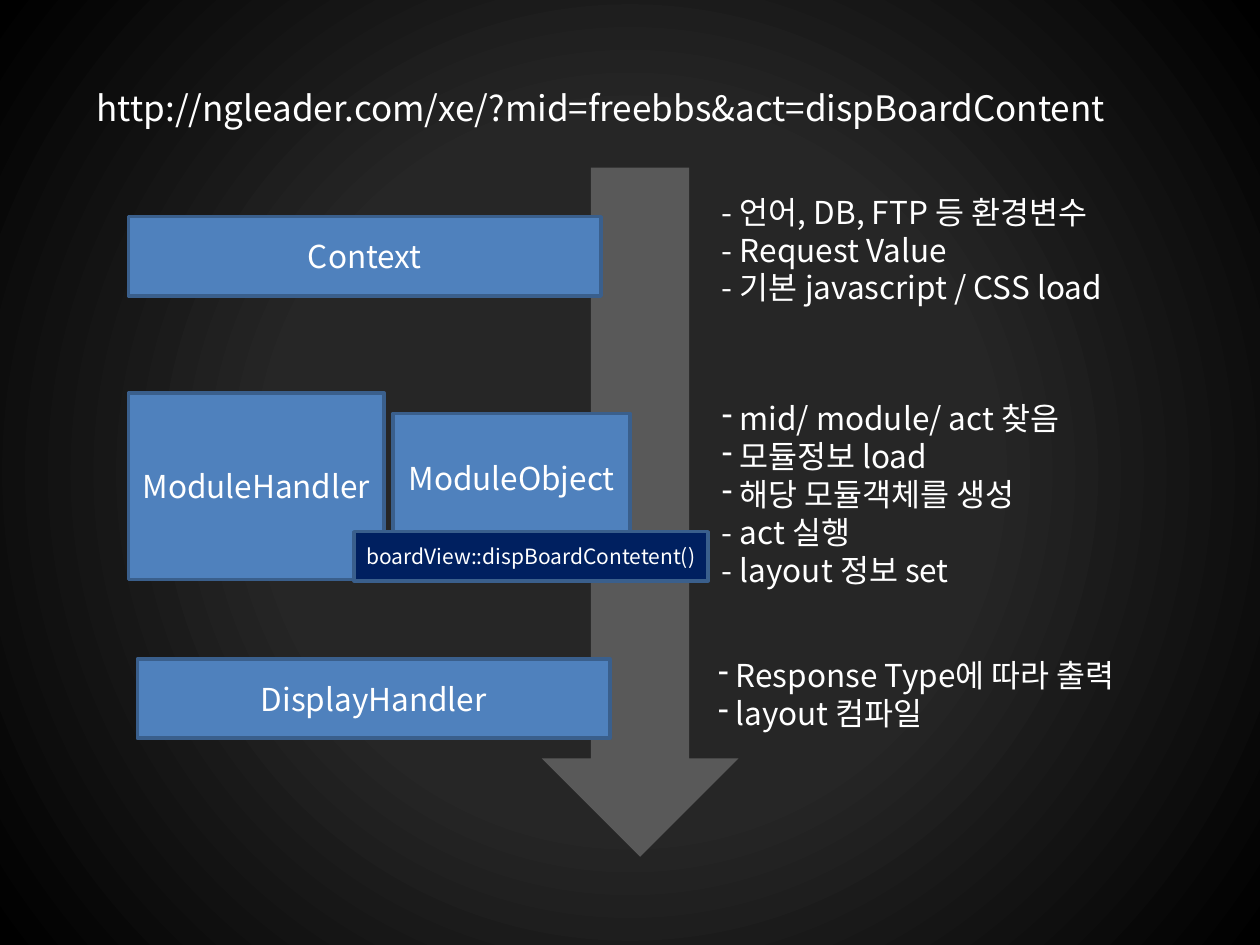
from lxml.etree import SubElement
from pptx import Presentation
from pptx.dml.color import RGBColor
from pptx.enum.shapes import MSO_SHAPE
from pptx.enum.text import MSO_ANCHOR, MSO_AUTO_SIZE, PP_ALIGN
from pptx.oxml import parse_xml
from pptx.oxml.ns import nsdecls, qn
from pptx.util import Inches, Pt

FONT = "Noto Sans CJK KR"
WHITE, GRAY, BLUE, NAVY, OUTLINE = "FFFFFF", "595959", "4F81BD", "002060", "3A5F8C"
COMPARISON_LAYOUT = 4


def color(value):
    return RGBColor.from_string(value)


class FlowSlide:
    def __init__(self, presentation):
        self.slide = presentation.slides.add_slide(
            presentation.slide_layouts[COMPARISON_LAYOUT])
        self.bodies = [shape for shape in self.slide.placeholders
                       if shape.placeholder_format.idx in (1, 2, 3, 4)]

    def background(self, center, edge):
        """Fill the slide with a radial gradient from center to edge."""
        self.slide.background.fill.solid()
        properties = self.slide.element.cSld.find(qn("p:bg")).find(qn("p:bgPr"))
        properties.replace(properties[0], parse_xml(
            f'<a:gradFill {nsdecls("a")} rotWithShape="1"><a:gsLst>'
            f'<a:gs pos="45000"><a:srgbClr val="{center}"/></a:gs>'
            f'<a:gs pos="100000"><a:srgbClr val="{edge}"/></a:gs></a:gsLst>'
            '<a:path path="circle"><a:fillToRect l="50000" t="50000" '
            'r="50000" b="50000"/></a:path></a:gradFill>'))

    def place(self, shape, left, top, width, height):
        shape.left, shape.top = Inches(left), Inches(top)
        shape.width, shape.height = Inches(width), Inches(height)

    def style(self, paragraph, size, alignment):
        paragraph.alignment = alignment
        paragraph.line_spacing = 1.0
        paragraph.space_before = paragraph.space_after = Pt(0)
        font = paragraph.font
        font.name, font.size, font.bold = FONT, Pt(size), False
        font.color.rgb = color(WHITE)
        defaults = paragraph._p.pPr.find(qn("a:defRPr"))
        SubElement(defaults, qn("a:ea")).set("typeface", FONT)

    def title(self, text, *bounds):
        shape = self.slide.shapes.title
        self.place(shape, *bounds)
        frame = shape.text_frame
        frame.text = text
        frame.word_wrap = True
        frame.auto_size = MSO_AUTO_SIZE.NONE
        frame.vertical_anchor = MSO_ANCHOR.MIDDLE
        self.style(frame.paragraphs[0], 20, PP_ALIGN.CENTER)

    def shape(self, kind, fill, left, top, width, height):
        shape = self.slide.shapes.add_shape(
            kind, Inches(left), Inches(top), Inches(width), Inches(height))
        shape.shadow.inherit = False
        shape.fill.solid()
        shape.fill.fore_color.rgb = color(fill)
        return shape

    def arrow(self, *bounds):
        """Add the arrow behind the placeholders."""
        arrow = self.shape(MSO_SHAPE.DOWN_ARROW, GRAY, *bounds)
        arrow.line.fill.background()
        self.slide.shapes.title.element.addprevious(arrow.element)

    def box(self, text, *bounds, fill=BLUE, size=18):
        shape = self.shape(MSO_SHAPE.RECTANGLE, fill, *bounds)
        shape.line.color.rgb = color(OUTLINE)
        shape.line.width = Pt(2)
        frame = shape.text_frame
        frame.text = text
        frame.word_wrap = True
        frame.vertical_anchor = MSO_ANCHOR.MIDDLE
        self.style(frame.paragraphs[0], size, PP_ALIGN.CENTER)

    def dash_list(self, lines, *bounds):
        """Fill the next body placeholder; lines with a typed dash get no bullet."""
        shape = self.bodies.pop(0)
        self.place(shape, *bounds)
        frame = shape.text_frame
        frame.text = "\n".join(lines)
        frame.word_wrap = True
        frame.auto_size = MSO_AUTO_SIZE.NONE
        frame.vertical_anchor = MSO_ANCHOR.TOP
        for paragraph in frame.paragraphs:
            properties = paragraph._p.get_or_add_pPr()
            properties.set("marL", "0")
            properties.set("indent", "0")
            if paragraph.text.startswith("-"):
                SubElement(properties, qn("a:buNone"))
            else:
                SubElement(properties, qn("a:buFontTx"))
                SubElement(properties, qn("a:buChar")).set("char", "-")
            self.style(paragraph, 18, PP_ALIGN.LEFT)

    def remove_empty(self):
        for shape in self.bodies:
            shape.element.getparent().remove(shape.element)


def main():
    presentation = Presentation()
    presentation.slide_width, presentation.slide_height = Inches(10), Inches(7.5)
    flow = FlowSlide(presentation)
    flow.background("262626", "000000")
    flow.title("http://ngleader.com/xe/?mid=freebbs&act=dispBoardContent",
               0.55, 0.7, 8.44, 0.31)
    flow.arrow(4.3, 1.33, 1.56, 5.47)

    flow.box("Context", 1.02, 1.72, 3.75, 0.63)
    flow.box("ModuleHandler", 1.02, 3.12, 2.03, 1.48)
    flow.box("DisplayHandler", 1.09, 5.23, 3.75, 0.63)
    flow.box("ModuleObject", 3.12, 3.28, 1.88, 1.02)
    flow.box("boardView::dispBoardContetent()", 2.81, 4.22, 2.81, 0.39,
             fill=NAVY, size=12)

    flow.dash_list(["- 언어, DB, FTP 등 환경변수", "- Request Value",
                    "- 기본 javascript / CSS load"], 5.63, 1.48, 3.37, 1.01)
    flow.dash_list([" mid/ module/ act 찾음", " 모듈정보 load",
                    " 해당 모듈객체를 생성", "- act 실행", "- layout 정보 set"],
                   5.63, 3.12, 3.01, 1.62)
    flow.dash_list([" Response Type에 따라 출력", " layout 컴파일"],
                   5.6, 5.16, 3.39, 0.71)
    flow.remove_empty()
    presentation.save("out.pptx")


if __name__ == "__main__":
    main()
